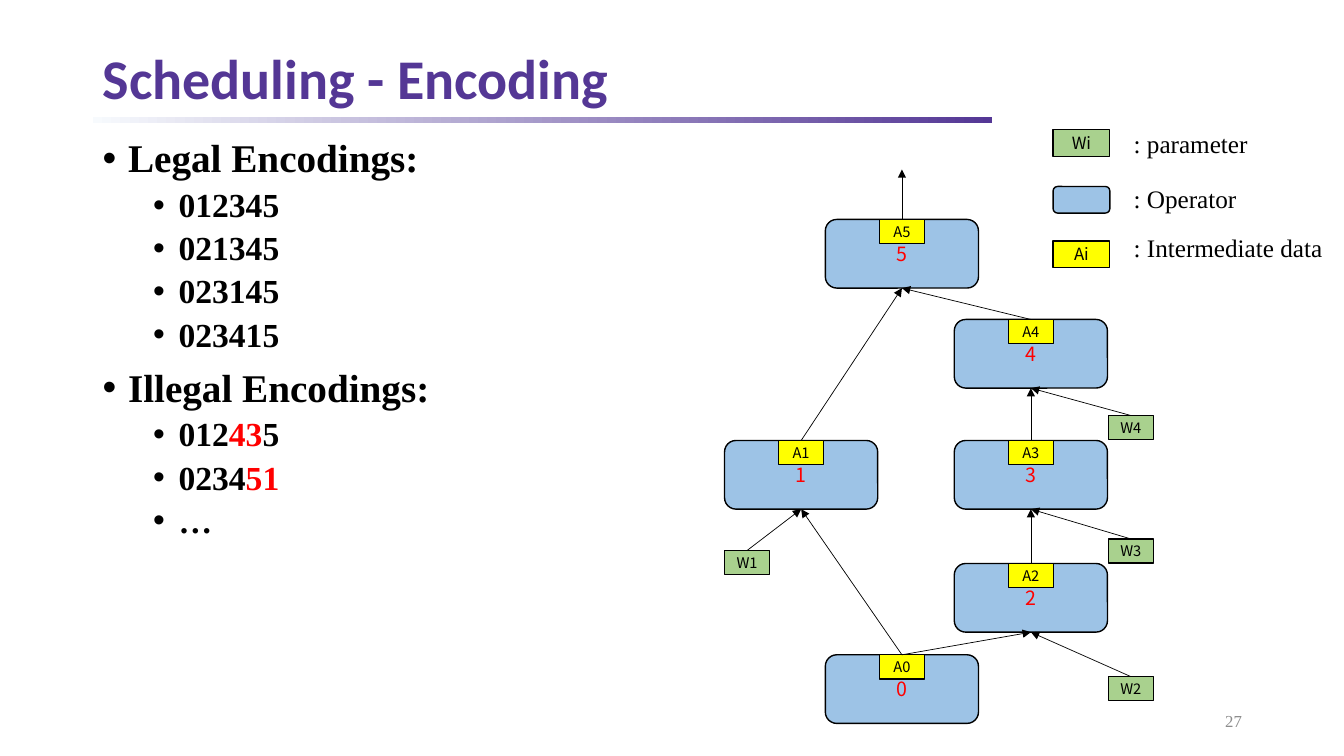
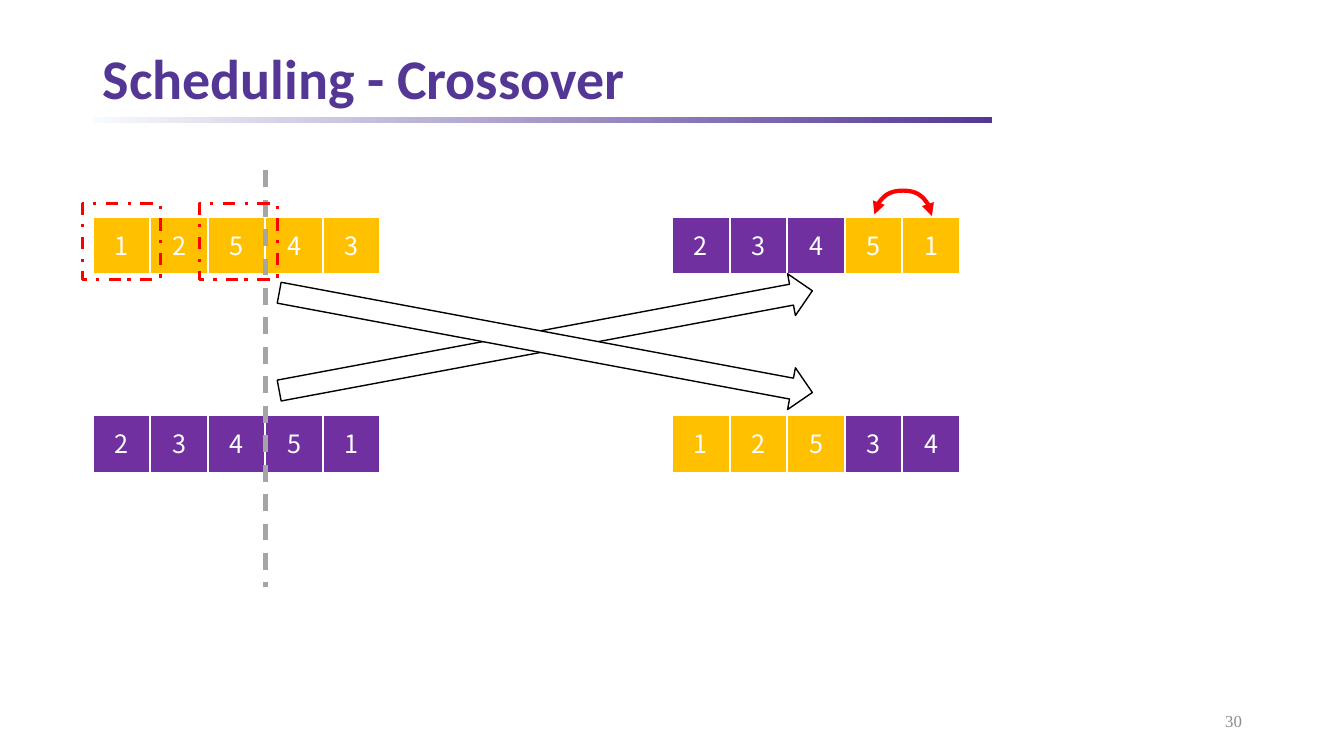
"""Build two slides on encoding and crossover in a scheduling search."""
from dataclasses import dataclass

from lxml.etree import SubElement
from pptx import Presentation
from pptx.dml.color import RGBColor
from pptx.enum.dml import MSO_LINE
from pptx.enum.shapes import MSO_CONNECTOR, MSO_SHAPE
from pptx.enum.text import MSO_ANCHOR, PP_ALIGN
from pptx.oxml.ns import qn
from pptx.util import Cm, Pt


@dataclass(frozen=True)
class Theme:
    """Colours, fonts and type sizes of the deck."""
    title: str = "543795"
    fade: str = "F7FAFD"
    page: str = "8C8C8C"
    black: str = "000000"
    white: str = "FFFFFF"
    red: str = "FF0000"
    operator: str = "9DC3E6"
    data: str = "FFFF00"
    param: str = "A9D18E"
    gold: str = "FFC000"
    purple: str = "7030A0"
    cut: str = "A5A5A5"
    head_font: str = "Calibri"
    body_font: str = "Times New Roman"
    label_font: str = "Noto Sans CJK SC"
    title_size: float = 40
    item_size: float = 28
    sub_size: float = 24
    text_size: float = 18
    node_size: float = 14
    small_size: float = 12
    tag_size: float = 10.5


T = Theme()
NODE_W, NODE_H = 3.86, 1.73
TAG_W, TAG_H = 1.14, 0.61
GENE = 1.45


def style(r, font, size, color, bold=False):
    """Format one run."""
    r.font.name, r.font.size, r.font.bold = font, Pt(size), bold
    r.font.color.rgb = RGBColor.from_string(color)


def add_text(s, text, box, font, size, color, bold=False, align=PP_ALIGN.LEFT,
             anchor=MSO_ANCHOR.MIDDLE, wrap=True):
    """Add a one-paragraph text box and return its paragraph."""
    tf = s.shapes.add_textbox(*map(Cm, box)).text_frame
    tf.word_wrap, tf.vertical_anchor = wrap, anchor
    p = tf.paragraphs[0]
    p.text, p.alignment = text, align
    style(p.runs[0], font, size, color, bold)
    return p


def add_box(s, kind, box, fill=None, line=T.black, width=1, text="",
            size=T.tag_size, color=T.black, dash=None):
    """Add a preset shape with an optional centred label."""
    sp = s.shapes.add_shape(kind, *map(Cm, box))
    sp.shadow.inherit = False
    if fill:
        sp.fill.solid()
        sp.fill.fore_color.rgb = RGBColor.from_string(fill)
    else:
        sp.fill.background()
    sp.line.color.rgb = RGBColor.from_string(line)
    sp.line.width = Pt(width)
    if dash:
        sp.line.dash_style = dash
    if text:
        tf = sp.text_frame
        tf.margin_left = tf.margin_right = tf.margin_top = tf.margin_bottom = 0
        tf.vertical_anchor = MSO_ANCHOR.MIDDLE
        p = tf.paragraphs[0]
        p.text, p.alignment = text, PP_ALIGN.CENTER
        style(p.runs[0], T.label_font, size, color)
    return sp


def add_line(s, ends, color=T.black, width=0.5, kind=MSO_CONNECTOR.STRAIGHT,
             dash=None, arrows=()):
    """Add a connector with the given arrowhead elements."""
    c = s.shapes.add_connector(kind, *map(Cm, ends))
    c.line.color.rgb = RGBColor.from_string(color)
    c.line.width = Pt(width)
    if dash:
        c.line.dash_style = dash
    sp_pr = c._element.spPr
    for arrow in arrows:
        SubElement(sp_pr.find(qn("a:ln")), qn(f"a:{arrow}"), type="triangle")
    SubElement(sp_pr, qn("a:effectLst"))
    return c


def link(s, start, end):
    """Draw an arrow from the top of one shape to the bottom of another."""
    c = add_line(s, (0, 0, 0, 0), arrows=("tailEnd",))
    c.begin_connect(start, 0)
    c.end_connect(end, 2)


def add_bullets(s, box, items):
    """Add a two-level list of (level, runs) with (text, colour) runs."""
    tf = s.shapes.add_textbox(*map(Cm, box)).text_frame
    tf.word_wrap = True
    for i, (level, parts) in enumerate(items):
        p = tf.add_paragraph() if i else tf.paragraphs[0]
        p.level, p.line_spacing = level, 0.9
        p.space_before = Pt((5 if level else 10) if i else 0)
        p_pr = p._p.get_or_add_pPr()
        p_pr.set("marL", str(Cm(1.91 if level else 0.64)))
        p_pr.set("indent", str(Cm(-0.64)))
        SubElement(p_pr, qn("a:buFont"), typeface="Arial")
        SubElement(p_pr, qn("a:buChar"), char="•")
        for text, color in parts:
            r = p.add_run()
            r.text = text
            style(r, T.body_font, T.sub_size if level else T.item_size, color, True)


def new_slide(prs, title, page):
    """Add a slide with the shared bar, title and page number."""
    s = prs.slides.add_slide(prs.slide_layouts[6])
    bar = add_box(s, MSO_SHAPE.RECTANGLE, (2.34, 2.96, 22.66, 0.14))
    bar.line.fill.background()
    bar.fill.gradient()
    bar.fill.gradient_angle = 0
    for stop, color in zip(bar.fill.gradient_stops, (T.fade, T.title)):
        stop.color.rgb = RGBColor.from_string(color)
    p = add_text(s, title, (2.34, 1.09, 29.21, 1.9), T.head_font, T.title_size,
                 T.title, bold=True)
    p.line_spacing = 0.9
    add_text(s, page, (23.93, 17.65, 7.62, 1.02), T.body_font, T.small_size,
             T.page, align=PP_ALIGN.RIGHT)
    return s


def add_operator(s, name, center, top):
    """Add a numbered operator with its data tag."""
    node = add_box(s, MSO_SHAPE.ROUNDED_RECTANGLE,
                   (center - NODE_W / 2, top, NODE_W, NODE_H), T.operator,
                   text=name, size=T.node_size, color=T.red)
    add_box(s, MSO_SHAPE.RECTANGLE, (center - TAG_W / 2, top, TAG_W, TAG_H),
            T.data, text=f"A{name}")
    return node


def add_graph(s):
    """Draw the operator graph with its parameters."""
    left, middle, right = 20.19, 22.73, 25.98
    places = {"5": (middle, 5.53), "4": (right, 8.05), "3": (right, 11.1),
              "2": (right, 14.2), "0": (middle, 16.5), "1": (left, 11.1)}
    params = {"1": (18.26, 13.87), "2": (27.93, 17.05),
              "3": (27.93, 13.58), "4": (27.93, 10.47)}
    nodes = {name: add_operator(s, name, *place) for name, place in places.items()}
    for name, place in params.items():
        param = add_box(s, MSO_SHAPE.RECTANGLE, (*place, TAG_W, TAG_H), T.param,
                        text=f"W{name}")
        link(s, param, nodes[name])
    for start, end in ("45", "15", "01", "02", "23", "34"):
        link(s, nodes[start], nodes[end])
    c = add_line(s, (middle, 5.53, middle, 4.27), arrows=("tailEnd",))
    c.begin_connect(nodes["5"], 0)


def add_legend(s):
    """Explain the three kinds of box."""
    rows = ((MSO_SHAPE.RECTANGLE, T.param, "Wi", ": parameter", 3.27, 3.1),
            (MSO_SHAPE.ROUNDED_RECTANGLE, T.operator, "", ": Operator", 4.7, 4.5),
            (MSO_SHAPE.RECTANGLE, T.data, "Ai", ": Intermediate data", 6.07, 5.72))
    for kind, fill, label, meaning, top, text_top in rows:
        add_box(s, kind, (26.54, top, 1.43, 0.67), fill, text=label, size=T.small_size)
        add_text(s, meaning, (28.32, text_top, 5.33, 1.02), T.body_font, T.text_size,
                 T.black, anchor=MSO_ANCHOR.TOP, wrap=False)


def add_genes(s, left, top, genes, colors):
    """Draw a row of equal squares, one per gene."""
    for i, (gene, color) in enumerate(zip(genes, colors)):
        add_box(s, MSO_SHAPE.RECTANGLE, (left + i * GENE, top, GENE, GENE), color,
                T.white, 1.5, gene, T.text_size, T.white)


def add_swap(s):
    """Draw the curved double arrow over the last two genes."""
    c = add_line(s, (22.74, 6.15, 22.78, 4.7), T.red, 3, MSO_CONNECTOR.CURVE,
                 arrows=("headEnd", "tailEnd"))
    sp_pr = c._element.spPr
    sp_pr.find(qn("a:xfrm")).set("rot", "16200000")
    guides = sp_pr.find(qn("a:prstGeom")).find(qn("a:avLst"))
    SubElement(guides, qn("a:gd"), name="adj1", fmla="val 1600000")


def encoding_slide(prs):
    """Show legal and illegal encodings beside the graph."""
    s = new_slide(prs, "Scheduling - Encoding", "27")
    legal = ("012345", "021345", "023145", "023415")
    add_bullets(s, (2.34, 3.38, 15, 13.79), [
        (0, [("Legal Encodings:", T.black)]),
        *((1, [(code, T.black)]) for code in legal),
        (0, [("Illegal Encodings:", T.black)]),
        (1, [("012", T.black), ("43", T.red), ("5", T.black)]),
        (1, [("0234", T.black), ("51", T.red)]),
        (1, [("…", T.black)]),
    ])
    add_graph(s)
    add_legend(s)


def crossover_slide(prs):
    """Show two parents exchanging genes at a cut."""
    s = new_slide(prs, "Scheduling - Crossover", "30")
    parent_x, child_x, upper, lower = 2.34, 16.94, 5.46, 10.46
    cut = parent_x + 3 * GENE
    add_genes(s, parent_x, upper, "12543", [T.gold] * 5)
    add_genes(s, parent_x, lower, "23451", [T.purple] * 5)
    add_line(s, (cut, 4.29, cut, 14.78), T.cut, 3, dash=MSO_LINE.DASH)
    add_genes(s, child_x, upper, "23451", [T.purple] * 3 + [T.gold] * 2)
    add_genes(s, child_x, lower, "12534", [T.gold] * 3 + [T.purple] * 2)
    for left in (2.08, 5.03):
        add_box(s, MSO_SHAPE.RECTANGLE, (left, 5.13, 1.96, 1.91), line=T.red,
                width=2.25, dash=MSO_LINE.DASH_DOT)
    for top, angle in ((8.05, -10.6), (8.1, 10.6)):
        arrow = add_box(s, MSO_SHAPE.RIGHT_ARROW, (6.92, top, 13.67, 1.07), T.white)
        arrow.rotation = angle
    add_swap(s)


def main():
    """Build and save the deck."""
    prs = Presentation()
    prs.slide_width, prs.slide_height = Cm(33.87), Cm(19.05)
    encoding_slide(prs)
    crossover_slide(prs)
    prs.save("out.pptx")


if __name__ == "__main__":
    main()
